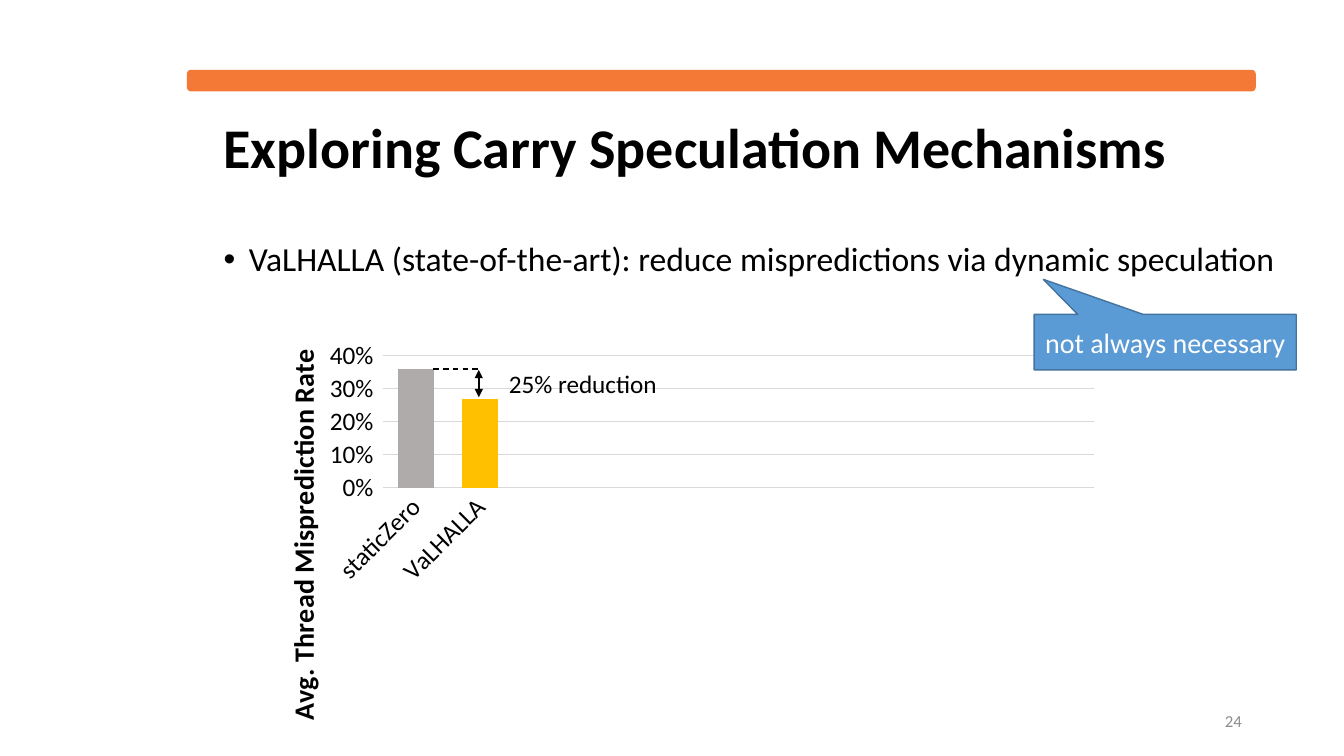
from lxml.etree import SubElement
from pptx import Presentation
from pptx.chart.data import CategoryChartData
from pptx.dml.color import RGBColor
from pptx.enum.chart import XL_CHART_TYPE as ChartType, XL_TICK_MARK as TickMark
from pptx.enum.dml import MSO_LINE as Dash
from pptx.enum.shapes import MSO_CONNECTOR as Connector, MSO_SHAPE as Preset
from pptx.enum.text import MSO_ANCHOR as Anchor, MSO_AUTO_SIZE as AutoSize, PP_ALIGN as Align
from pptx.oxml import parse_xml
from pptx.oxml.ns import nsdecls, qn
from pptx.util import Pt

FONT = "Calibri"
BLACK = RGBColor(0x00, 0x00, 0x00)
WHITE = RGBColor(0xFF, 0xFF, 0xFF)
ORANGE = RGBColor(0xF4, 0x78, 0x36)
BLUE = RGBColor(0x5B, 0x9B, 0xD5)
DARK_BLUE = RGBColor(0x43, 0x73, 0x9E)
GRAY = RGBColor(0xAF, 0xAB, 0xAB)
GOLD = RGBColor(0xFF, 0xC0, 0x00)
GRID_GRAY = RGBColor(0xD9, 0xD9, 0xD9)
NUMBER_GRAY = RGBColor(0x8C, 0x8C, 0x8C)

RATES = {"staticZero": 0.36, "VaLHALLA": 0.27}
BAR_COLORS = [GRAY, GOLD]
SLOT_COUNT = 11


def place(shape, left, top, width, height):
    shape.left, shape.top = Pt(left), Pt(top)
    shape.width, shape.height = Pt(width), Pt(height)


def style_font(font, size, color=BLACK, bold=False):
    font.name, font.size, font.bold = FONT, Pt(size), bold
    font.color.rgb = color


def write(shape, text, size, color=BLACK, bold=False, align=Align.LEFT,
          anchor=Anchor.TOP, wrap=True):
    frame = shape.text_frame
    frame.auto_size = AutoSize.NONE
    frame.word_wrap = wrap
    frame.vertical_anchor = anchor
    paragraph = frame.paragraphs[0]
    paragraph.alignment = align
    run = paragraph.add_run()
    run.text = text
    style_font(run.font, size, color, bold)
    return paragraph


def add_label(slide, box, text, size, **style):
    label = slide.shapes.add_textbox(*map(Pt, box))
    write(label, text, size, **style)


def add_box(slide, preset, box, fill, line):
    shape = slide.shapes.add_shape(preset, *map(Pt, box))
    shape.shadow.inherit = False
    shape.fill.solid()
    shape.fill.fore_color.rgb = fill
    shape.line.color.rgb = line
    shape.line.width = Pt(1)
    return shape


def add_line(slide, start, end, width):
    connector = slide.shapes.add_connector(Connector.STRAIGHT, *map(Pt, start + end))
    connector.line.color.rgb = BLACK
    connector.line.width = Pt(width)
    SubElement(connector.element.spPr, qn("a:effectLst"))
    return connector


def add_arrowheads(connector):
    line = connector.line._get_or_add_ln()
    for end in ("a:headEnd", "a:tailEnd"):
        SubElement(line, qn(end), type="triangle")


def add_bullet(paragraph, indent):
    properties = paragraph._p.get_or_add_pPr()
    properties.set("marL", str(Pt(indent)))
    properties.set("indent", str(Pt(-indent)))
    SubElement(properties, qn("a:buFont"), typeface="Arial")
    SubElement(properties, qn("a:buChar"), char="•")


def set_layout(element, inner=False, **fractions):
    """Fix the place of a chart part, as fractions of the chart area."""
    layout = element.find(qn("c:layout"))
    if layout is None:
        layout = parse_xml(f"<c:layout {nsdecls('c')}/>")
        element.insert(0, layout)
    manual = SubElement(layout, qn("c:manualLayout"))
    if inner:
        SubElement(manual, qn("c:layoutTarget"), val="inner")
    for mode in ("xMode", "yMode"):
        SubElement(manual, qn(f"c:{mode}"), val="edge")
    for name, value in fractions.items():
        SubElement(manual, qn(f"c:{name}"), val=str(value))


def rotate_text(chart, query, degrees):
    body = chart.element.xpath(query)[0]
    body.set("rot", str(degrees * 60000))
    body.set("vert", "horz")


def style_value_axis(axis):
    axis.minimum_scale, axis.maximum_scale, axis.major_unit = 0, 0.4, 0.1
    axis.major_tick_mark = TickMark.OUTSIDE
    axis.format.line.fill.background()
    axis.major_gridlines.format.line.color.rgb = GRID_GRAY
    axis.major_gridlines.format.line.width = Pt(0.75)
    axis.tick_labels.number_format = "0%"
    axis.tick_labels.number_format_is_linked = False
    style_font(axis.tick_labels.font, 18)
    run = axis.axis_title.text_frame.paragraphs[0].add_run()
    run.text = "Avg. Thread Misprediction Rate"
    style_font(run.font, 20, bold=True)


def style_category_axis(axis):
    axis.major_tick_mark = TickMark.NONE
    axis.format.line.color.rgb = GRID_GRAY
    axis.format.line.width = Pt(0.75)
    style_font(axis.tick_labels.font, 18)


def add_rate_chart(slide, box):
    data = CategoryChartData(number_format="0%")
    empty_slots = SLOT_COUNT - len(RATES)
    data.categories = [*RATES, *[""] * empty_slots]
    data.add_series("Series 1", [*RATES.values(), *[None] * empty_slots])
    chart = slide.shapes.add_chart(ChartType.COLUMN_CLUSTERED, *map(Pt, box), data).chart
    chart.has_legend = chart.has_title = False
    style_font(chart.font, 18)
    style_value_axis(chart.value_axis)
    style_category_axis(chart.category_axis)

    plot = chart.plots[0]
    plot.gap_width = 80
    plot.vary_by_categories = False
    series = plot.series[0]
    series.format.fill.solid()
    series.format.fill.fore_color.rgb = BLUE
    for index, color in enumerate(BAR_COLORS):
        fill = series.points[index].format.fill
        fill.solid()
        fill.fore_color.rgb = color

    rotate_text(chart, ".//c:valAx/c:title//a:bodyPr", -90)
    rotate_text(chart, ".//c:catAx/c:txPr/a:bodyPr", -45)
    set_layout(chart.element.xpath(".//c:plotArea")[0], inner=True,
               x=0.144, y=0.04, w=0.838, h=0.23)
    set_layout(chart.element.xpath(".//c:valAx/c:title")[0], x=0.02, y=0.02)


def main():
    presentation = Presentation()
    presentation.slide_width, presentation.slide_height = Pt(960), Pt(540)
    slide = presentation.slides.add_slide(presentation.slide_layouts[1])
    title, body = slide.placeholders

    add_box(slide, Preset.ROUNDED_RECTANGLE, (134, 50.4, 762.5, 14.4), ORANGE, ORANGE)

    place(title, 152.6, 74.9, 749.5, 65.5)
    heading = write(title, "Exploring Carry Speculation Mechanisms", 40,
                    bold=True, anchor=Anchor.MIDDLE)
    heading.line_spacing = 0.9

    place(body, 152.6, 169.9, 774.7, 100.1)
    point = write(body, "VaLHALLA (state-of-the-art): reduce mispredictions "
                        "via dynamic speculation", 24)
    point.line_spacing, point.space_before = 0.9, Pt(0)
    add_bullet(point, 18)

    add_rate_chart(slide, (186.5, 237.6, 606.2, 410.4))
    level = add_line(slide, (309.6, 263.5), (342, 263.5), 1)
    level.line.dash_style = Dash.DASH
    add_label(slide, (356.4, 259.2, 123.1, 28.8), "25% reduction", 18, wrap=False)
    add_arrowheads(add_line(slide, (342, 283.7), (342, 264.2), 1.5))

    add_label(slide, (678.2, 500.4, 216, 28.8), "24", 12, color=NUMBER_GRAY,
              align=Align.RIGHT, anchor=Anchor.MIDDLE)

    callout = add_box(slide, Preset.RECTANGULAR_CALLOUT, (738.7, 224.6, 187.2, 39.6),
                      BLUE, DARK_BLUE)
    callout.adjustments[0], callout.adjustments[1] = -0.465, -1.133
    write(callout, "not always necessary", 20, color=WHITE, align=Align.CENTER,
          anchor=Anchor.MIDDLE, wrap=False)

    presentation.save("out.pptx")


if __name__ == "__main__":
    main()
